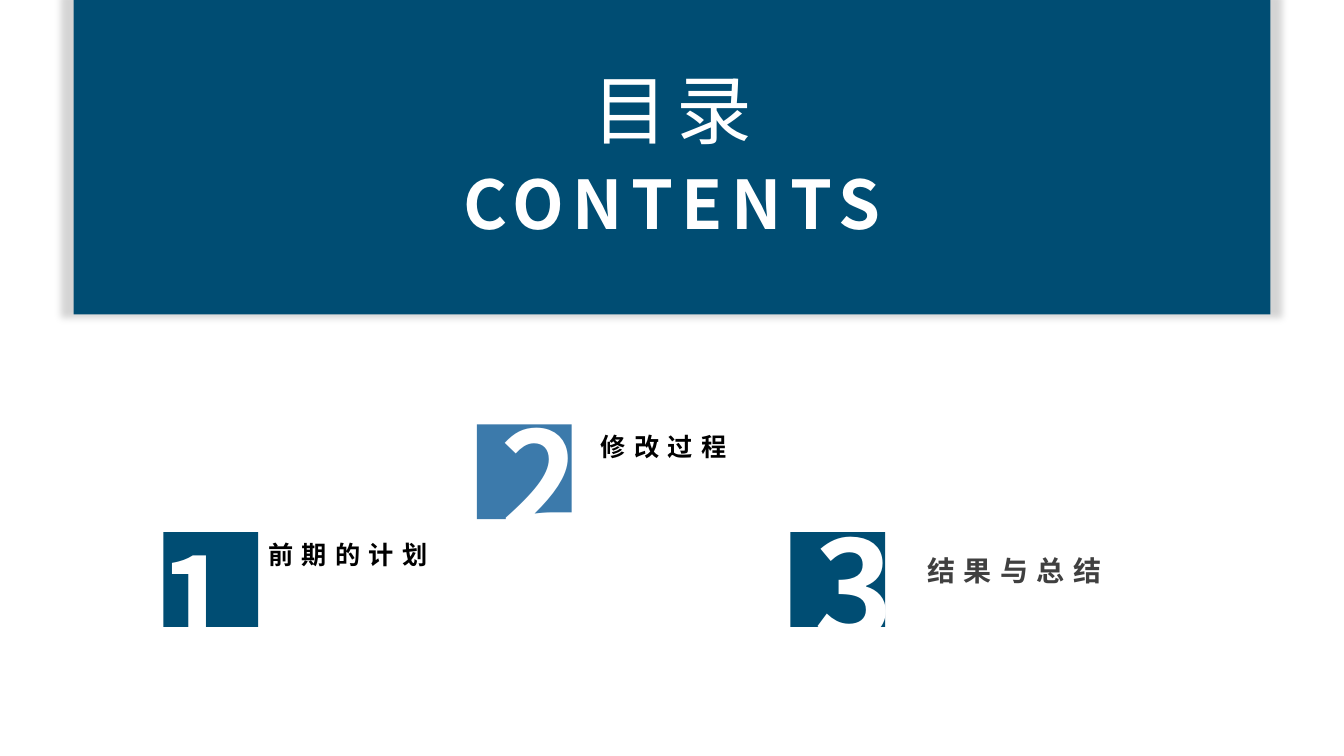
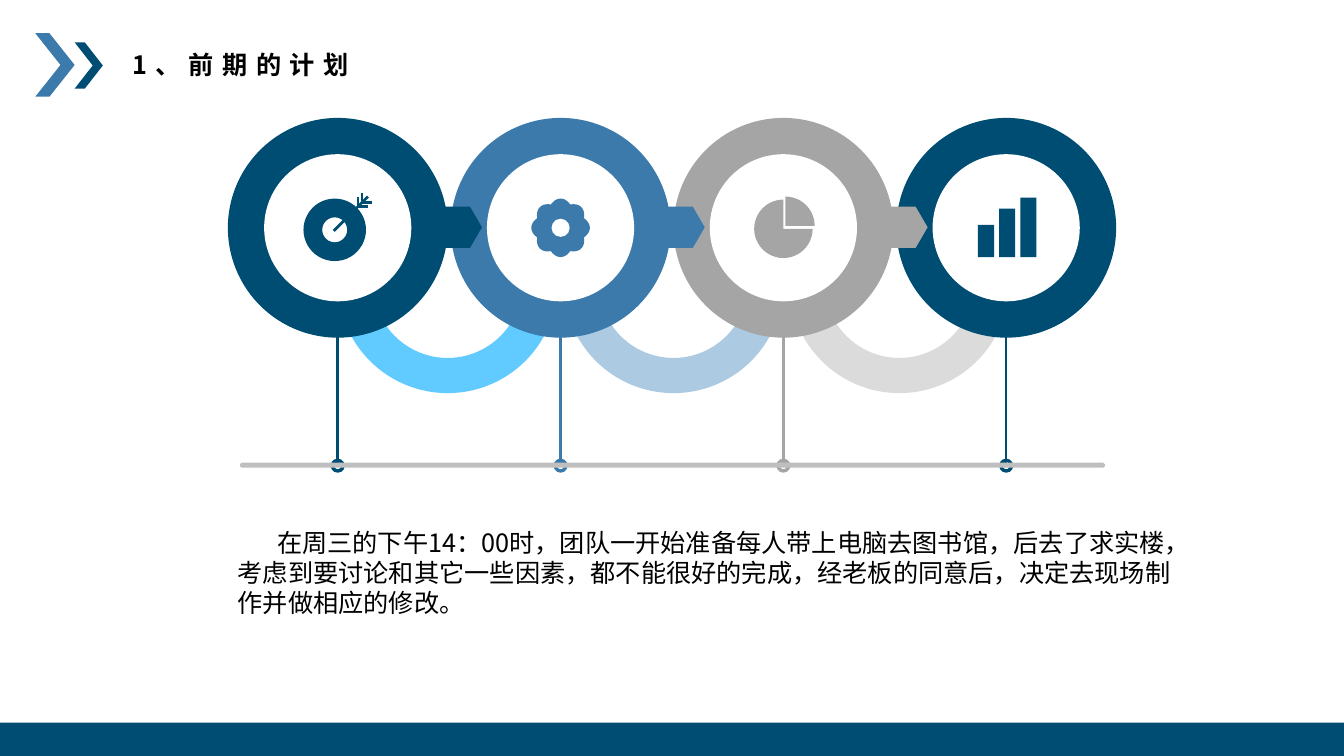
from math import cos, pi, sin

from lxml import etree
from pptx import Presentation
from pptx.dml.color import RGBColor
from pptx.enum.shapes import MSO_CONNECTOR, MSO_SHAPE
from pptx.enum.text import MSO_ANCHOR, MSO_AUTO_SIZE, PP_ALIGN
from pptx.oxml.ns import qn
from pptx.util import Inches, Pt

RECT, OVAL, ROUND = MSO_SHAPE.RECTANGLE, MSO_SHAPE.OVAL, MSO_SHAPE.ROUNDED_RECTANGLE
DONUT, ARC, PIE = MSO_SHAPE.DONUT, MSO_SHAPE.BLOCK_ARC, MSO_SHAPE.PIE
TAG, CHEVRON = MSO_SHAPE.PENTAGON, MSO_SHAPE.CHEVRON
STRAIGHT = MSO_CONNECTOR.STRAIGHT
LEFT, CENTER = PP_ALIGN.LEFT, PP_ALIGN.CENTER
TOP, BOTTOM = MSO_ANCHOR.TOP, MSO_ANCHOR.BOTTOM
NO_FIT = MSO_AUTO_SIZE.NONE

NAVY, BLUE, GRAY, WHITE, BLACK = "004D73", "3C7AAB", "A5A5A5", "FFFFFF", "000000"
SANS = "Noto Sans CJK SC"
SLIDE_W, SLIDE_H = 13.33, 7.5
TITLE_ONLY = 5


def rgb(color):
    """Turn a hex string into a colour."""
    return RGBColor.from_string(color)


def paint(sp, color):
    """Give a shape a flat fill without line or shadow."""
    sp.shadow.inherit = False
    sp.fill.solid()
    sp.fill.fore_color.rgb = rgb(color)
    sp.line.fill.background()
    return sp


def shape(s, kind, x, y, w, h, color, adj=()):
    """Add a flat preset shape."""
    sp = s.shapes.add_shape(kind, Inches(x), Inches(y), Inches(w), Inches(h))
    for i, value in enumerate(adj):
        sp.adjustments[i] = value
    return paint(sp, color)


def disc(s, kind, cx, cy, radius, color, adj=()):
    """Add a round shape about its centre."""
    return shape(s, kind, cx - radius, cy - radius, 2 * radius, 2 * radius, color, adj)


def line(s, x1, y1, x2, y2, color, width):
    """Add a straight line without shadow."""
    cn = s.shapes.add_connector(STRAIGHT, Inches(x1), Inches(y1), Inches(x2), Inches(y2))
    cn.line.color.rgb = rgb(color)
    cn.line.width = Pt(width)
    etree.SubElement(cn.element.spPr, qn("a:effectLst"))


def text(s, words, x, y, w, h, size=18, color=BLACK, bold=False, font=SANS, spacing=0,
         align=LEFT, anchor=TOP, wrap=True, indent=0, title=False):
    """Write one paragraph in a text box or in the slide's title."""
    if title:
        sp = s.shapes.title
        s.shapes.element.append(sp.element)
        sp.left, sp.top, sp.width, sp.height = Inches(x), Inches(y), Inches(w), Inches(h)
    else:
        sp = s.shapes.add_textbox(Inches(x), Inches(y), Inches(w), Inches(h))
    tf = sp.text_frame
    tf.auto_size, tf.word_wrap, tf.vertical_anchor = NO_FIT, wrap, anchor
    p = tf.paragraphs[0]
    p.alignment = align
    if indent:
        p._p.get_or_add_pPr().set("indent", str(Inches(indent)))
    r = p.add_run()
    r.text = words
    r.font.size, r.font.bold, r.font.name = Pt(size), bold, font
    r.font.color.rgb = rgb(color)
    props = r.font._element
    etree.SubElement(props, qn("a:ea")).set("typeface", font)
    if spacing:
        props.set("spc", str(spacing * 100))


def glow(sp, alpha, blur, scale):
    """Put a soft centred shadow behind a shape."""
    effects = sp.element.spPr.find(qn("a:effectLst"))
    shade = etree.SubElement(effects, qn("a:outerShdw"), blurRad=str(Pt(blur)),
                             sx=str(scale * 1000), sy=str(scale * 1000),
                             algn="ctr", rotWithShape="0")
    tint = etree.SubElement(shade, qn("a:srgbClr"), val=BLACK)
    etree.SubElement(tint, qn("a:alpha"), val=str(alpha * 1000))


def banner(s, x, y, w, h):
    """Draw the contents heading on its dark panel."""
    glow(shape(s, RECT, x, y, w, h, NAVY), 16, 5, 102)
    style = dict(color=WHITE, spacing=6, align=CENTER, anchor=BOTTOM)
    text(s, "CONTENTS", x, y + 1.42, w, 1.05, size=48, bold=True, **style)
    text(s, "目录", x, y + 0.53, w, 1.05, size=54, font="Arial", title=True, **style)


def entry(s, x, y, number, label, fill, digit, caption, size=18, color=BLACK):
    """Draw a numbered square with its label, at offsets from the square."""
    shape(s, RECT, x, y, 0.94, 0.94, fill)
    dx, dy, digit_size = digit
    text(s, number, x + dx, y + dy, 0.95, 1.72, size=digit_size, color=WHITE, bold=True)
    text(s, label, x + caption[0], y + caption[1], 2.12, 0.42, size=size, color=color,
         bold=True, spacing=6, anchor=BOTTOM)


def header(s, title):
    """Draw the chevrons, title and foot band of a content slide."""
    shape(s, CHEVRON, 0.35, 0.33, 0.39, 0.63, BLUE, [0.64])
    shape(s, CHEVRON, 0.74, 0.42, 0.28, 0.46, NAVY, [0.64])
    text(s, title, 1.21, 0.44, 2.42, 0.4, bold=True, spacing=6, wrap=False, title=True)
    shape(s, RECT, 0, SLIDE_H - 0.33, SLIDE_W, 0.33, NAVY)


def target_icon(s, cx, cy, color):
    """Draw a target hit by an arrow."""
    disc(s, DONUT, cx - 0.03, cy + 0.02, 0.31, color, [0.3])
    line(s, cx - 0.04, cy + 0.03, cx + 0.3, cy - 0.31, color, 2)
    for x, y in ((0.2, -0.21), (0.24, -0.25)):
        line(s, cx + x, cy + y, cx + x, cy + y - 0.1, color, 2)
        line(s, cx + x, cy + y, cx + x + 0.1, cy + y, color, 2)


def gear_icon(s, cx, cy, color):
    """Draw a gear with eight round teeth."""
    points = []
    for step in range(160):
        angle = step * pi / 80
        radius = 0.25 + 0.04 * abs(cos(4 * angle))
        points.append((Inches(cx + radius * cos(angle)), Inches(cy + radius * sin(angle))))
    outline = s.shapes.build_freeform(*points[0])
    outline.add_line_segments(points[1:])
    paint(outline.convert_to_shape(), color)
    disc(s, OVAL, cx, cy, 0.09, WHITE)


def pie_icon(s, cx, cy, color):
    """Draw a pie with one quarter pulled out."""
    disc(s, PIE, cx, cy + 0.01, 0.29, color, [0, 162])
    disc(s, PIE, cx + 0.02, cy - 0.02, 0.29, color, [162, 0])


def bars_icon(s, cx, cy, color):
    """Draw three rising bars."""
    for i, height in enumerate((0.32, 0.48, 0.59)):
        shape(s, RECT, cx - 0.28 + 0.21 * i, cy + 0.29 - height, 0.16, height, color)


def station(s, cx, cy, color, icon, arrow):
    """Draw a ring with an icon and an arrow to the next ring."""
    disc(s, OVAL, cx, cy, 1.09, color)
    if arrow:
        shape(s, TAG, cx + 0.62, cy - 0.21, 0.81, 0.41, color, [0.29])
    disc(s, OVAL, cx, cy, 0.73, WHITE)
    icon(s, cx, cy, color)


def timeline(s, x, y):
    """Draw the chain of rings above its base line."""
    stations = [(NAVY, target_icon), (BLUE, gear_icon), (GRAY, pie_icon), (NAVY, bars_icon)]
    cx, cy, pitch = x + 1.09, y + 1.09, 2.21
    base = y + 3.45
    for i, (color, _) in enumerate(stations):
        line(s, cx + pitch * i, cy + 0.74, cx + pitch * i, base, color, 1.75)
        disc(s, DONUT, cx + pitch * i, base, 0.07, color, [0.25])
    for i, color in enumerate(("61CBFF", "ACCAE2", "DBDBDB")):
        disc(s, ARC, cx + 1.09 + 2.24 * i, cy + 0.55, 1.09, color, [0, 108, 0.16])
    shape(s, ROUND, x + 0.12, base - 0.03, 8.58, 0.05, "BFBFBF", [0.5])
    last = len(stations) - 1
    for i in range(last, -1, -1):
        color, icon = stations[i]
        station(s, cx + pitch * i, cy, color, icon, i < last)


def contents_slide(prs):
    """Build the table of contents."""
    s = prs.slides.add_slide(prs.slide_layouts[TITLE_ONLY])
    banner(s, 0.73, -0.01, 11.87, 3.13)
    left, pitch = 1.62, 3.11
    entry(s, left, 5.28, "1", "前期的计划", NAVY, (-0.14, -0.13, 86.4), (0.94, 0))
    entry(s, left + pitch, 4.21, "2", "修改过程", BLUE, (0.14, -0.34, 96), (1.13, 0))
    entry(s, left + 2 * pitch, 5.28, "3", "结果与总结", NAVY, (0.14, -0.33, 96),
          (1.26, 0.17), size=20, color="404040")


def plan_slide(prs):
    """Build the slide on the early plan."""
    s = prs.slides.add_slide(prs.slide_layouts[TITLE_ONLY])
    timeline(s, 2.26, 1.17)
    header(s, "1、前期的计划")
    text(s, "在周三的下午14：00时，团队一开始准备每人带上电脑去图书馆，后去了求实楼，"
         "考虑到要讨论和其它一些因素，都不能很好的完成，经老板的同意后，"
         "决定去现场制作并做相应的修改。", 2.26, 5.18, 9.53, 1.01, indent=0.39)


def main():
    """Build and save the presentation."""
    prs = Presentation()
    prs.slide_width, prs.slide_height = Inches(SLIDE_W), Inches(SLIDE_H)
    contents_slide(prs)
    plan_slide(prs)
    prs.save("out.pptx")


if __name__ == "__main__":
    main()
